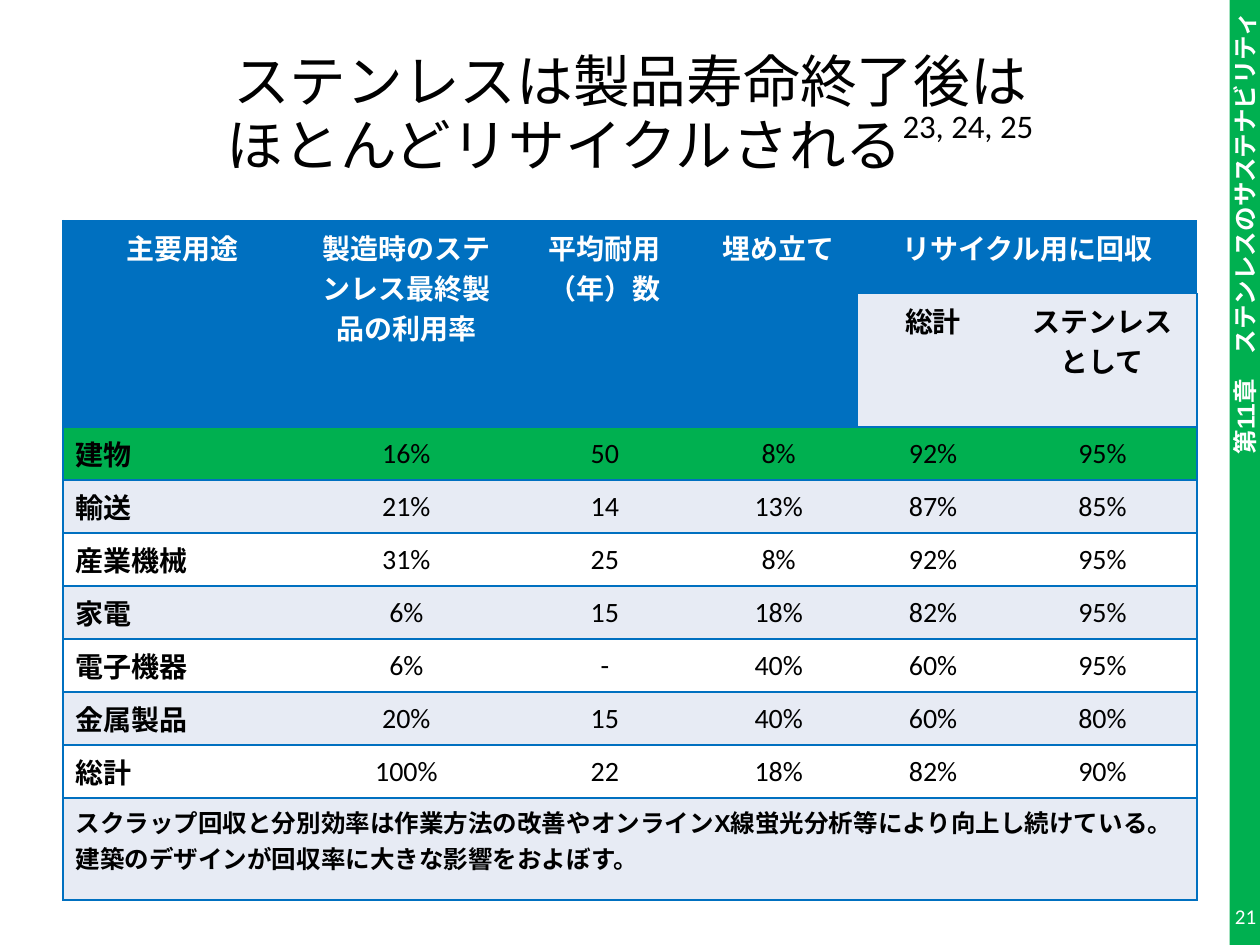
import dataclasses

import pptx
import pptx.dml.color
import pptx.enum.lang
import pptx.enum.shapes
import pptx.enum.text
import pptx.oxml
import pptx.oxml.ns
import pptx.util

Inches = pptx.util.Inches
Pt = pptx.util.Pt
ALIGN = pptx.enum.text.PP_ALIGN
ANCHOR = pptx.enum.text.MSO_ANCHOR


@dataclasses.dataclass(frozen=True)
class Theme:
    blue: str = "0070C0"
    green: str = "00B050"
    pale: str = "E7EBF4"
    white: str = "FFFFFF"
    black: str = "000000"
    body_font: str = "Calibri"
    note_font: str = "Arial"
    title_size: float = 32.4
    table_size: float = 16
    note_size: float = 14
    number_size: float = 12
    border_width: float = 1


THEME = Theme()

COLUMN_WIDTHS = [1.9, 1.65, 1.5, 1.26, 1.19, 1.5]
ROW_HEIGHTS = [0.58, 0.47] + [0.41] * 7 + [0.81]
HEADINGS = ["主要用途", "製造時のステンレス最終製品の利用率", "平均耐用（年）数",
            "埋め立て", "リサイクル用に回収"]
SUBHEADINGS = ["総計", "ステンレスとして"]
USES = [
    ("建物", "16%", "50", "8%", "92%", "95%"),
    ("輸送", "21%", "14", "13%", "87%", "85%"),
    ("産業機械", "31%", "25", "8%", "92%", "95%"),
    ("家電", "6%", "15", "18%", "82%", "95%"),
    ("電子機器", "6%", "-", "40%", "60%", "95%"),
    ("金属製品", "20%", "15", "40%", "60%", "80%"),
    ("総計", "100%", "22", "18%", "82%", "90%"),
]
NOTES = ["スクラップ回収と分別効率は作業方法の改善やオンラインX線蛍光分析等により向上し続けている。",
         "建築のデザインが回収率に大きな影響をおよぼす。"]


def rgb(color):
    return pptx.dml.color.RGBColor.from_string(color)


def format_font(font, size, color=THEME.black, name=THEME.body_font, bold=False):
    values = {"size": Pt(size), "name": name, "bold": bold,
              "language_id": pptx.enum.lang.MSO_LANGUAGE_ID.JAPANESE}
    for attribute, value in values.items():
        setattr(font, attribute, value)
    font.color.rgb = rgb(color)


def write_lines(text_frame, lines, align, **font_values):
    """Write each line as a paragraph with one format."""
    for index, line in enumerate(lines):
        paragraph = text_frame.add_paragraph() if index else text_frame.paragraphs[0]
        paragraph.alignment = align
        run = paragraph.add_run()
        run.text = line
        format_font(run.font, **font_values)


def set_borders(cell, visible_sides):
    """Draw the named sides of a cell (L, R, T, B) and hide the others."""
    properties = cell._tc.get_or_add_tcPr()
    for side in "LRTB":
        paint = (f'<a:solidFill><a:srgbClr val="{THEME.blue}"/></a:solidFill>'
                 if side in visible_sides else "<a:noFill/>")
        properties.append(pptx.oxml.parse_xml(
            f'<a:ln{side} {pptx.oxml.ns.nsdecls("a")} w="{Pt(THEME.border_width)}">'
            f"{paint}</a:ln{side}>"))


def fill_cell(cell, lines, fill, align=ALIGN.CENTER, anchor=ANCHOR.TOP, **font_values):
    cell.fill.solid()
    cell.fill.fore_color.rgb = rgb(fill)
    cell.vertical_anchor = anchor
    write_lines(cell.text_frame, lines, align, **{"size": THEME.table_size, **font_values})


def add_sidebar(slide, left, top, width, height):
    shape = slide.shapes.add_shape(
        pptx.enum.shapes.MSO_SHAPE.RECTANGLE, left, top, width, height)
    shape.shadow.inherit = False
    shape.fill.solid()
    shape.fill.fore_color.rgb = rgb(THEME.green)
    shape.line.fill.background()
    text_frame = shape.text_frame
    text_frame.vertical_anchor = ANCHOR.MIDDLE
    text_frame._txBody.bodyPr.set("vert", "vert270")
    write_lines(text_frame, ["第11章　ステンレスのサステナビリティ"], ALIGN.RIGHT,
                size=THEME.note_size, color=THEME.white, name=THEME.note_font, bold=True)


def add_title(slide, left, top, width, height):
    title = slide.shapes.title
    box = {"left": left, "top": top, "width": width, "height": height}
    for attribute, value in box.items():
        setattr(title, attribute, value)
    text_frame = title.text_frame
    text_frame.auto_size = pptx.enum.text.MSO_AUTO_SIZE.NONE
    text_frame.vertical_anchor = ANCHOR.MIDDLE
    paragraph = text_frame.paragraphs[0]
    paragraph.alignment = ALIGN.CENTER
    paragraph.line_spacing = 0.9
    for index, text in enumerate(
            ["ステンレスは製品寿命終了後は", "ほとんどリサイクルされる", "23, 24, 25"]):
        if index == 1:
            paragraph.add_line_break()
        run = paragraph.add_run()
        run.text = text
        format_font(run.font, THEME.title_size)
    run.font._element.set("baseline", "50000")


def add_recycling_table(slide, left, top, width, height):
    table = slide.shapes.add_table(
        len(ROW_HEIGHTS), len(COLUMN_WIDTHS), left, top, width, height).table
    for column, column_width in zip(table.columns, COLUMN_WIDTHS):
        column.width = Inches(column_width)
    for row, row_height in zip(table.rows, ROW_HEIGHTS):
        row.height = Inches(row_height)

    last_row, last_column = len(ROW_HEIGHTS) - 1, len(COLUMN_WIDTHS) - 1
    for column in range(4):
        table.cell(0, column).merge(table.cell(1, column))
    table.cell(0, 4).merge(table.cell(0, last_column))
    table.cell(last_row, 0).merge(table.cell(last_row, last_column))

    for row in range(last_row + 1):
        for column in range(last_column + 1):
            sides = "TB"
            if column == 0:
                sides += "L"
            if column == last_column or row == last_row and column == 0:
                sides += "R"
            set_borders(table.cell(row, column), sides)

    for column, heading in enumerate(HEADINGS):
        fill_cell(table.cell(0, column), [heading], THEME.blue,
                  color=THEME.white, bold=True)
    for column, heading in enumerate(SUBHEADINGS, start=4):
        fill_cell(table.cell(1, column), [heading], THEME.pale, bold=True)
    for index, (use, *values) in enumerate(USES):
        row = index + 2
        fill = THEME.green if index == 0 else (THEME.white, THEME.pale)[index % 2]
        fill_cell(table.cell(row, 0), [use], fill, align=ALIGN.LEFT, bold=True)
        for column, value in enumerate(values, start=1):
            fill_cell(table.cell(row, column), [value], fill, anchor=ANCHOR.MIDDLE)
    fill_cell(table.cell(last_row, 0), NOTES, THEME.pale, align=ALIGN.JUSTIFY,
              size=THEME.note_size, name=THEME.note_font, bold=True)


def add_page_number(slide, left, top, width, height):
    text_frame = slide.shapes.add_textbox(left, top, width, height).text_frame
    values = {"word_wrap": True, "vertical_anchor": ANCHOR.MIDDLE, "margin_left": 0,
              "margin_right": 0, "margin_top": 0, "margin_bottom": 0}
    for attribute, value in values.items():
        setattr(text_frame, attribute, value)
    write_lines(text_frame, ["21"], ALIGN.RIGHT,
                size=THEME.number_size, color=THEME.white)


def main():
    presentation = pptx.Presentation()
    presentation.slide_width = Inches(10)
    presentation.slide_height = Inches(7.5)
    slide = presentation.slides.add_slide(presentation.slide_layouts[5])
    add_sidebar(slide, Inches(9.76), Inches(0), Inches(0.24), Inches(7.5))
    add_title(slide, Inches(0.5), Inches(0.3), Inches(9), Inches(1.25))
    add_recycling_table(slide, Inches(0.5), Inches(1.75), Inches(9), Inches(4.87))
    add_page_number(slide, Inches(9.54), Inches(7.07), Inches(0.43), Inches(0.4))
    presentation.save("out.pptx")


if __name__ == "__main__":
    main()
